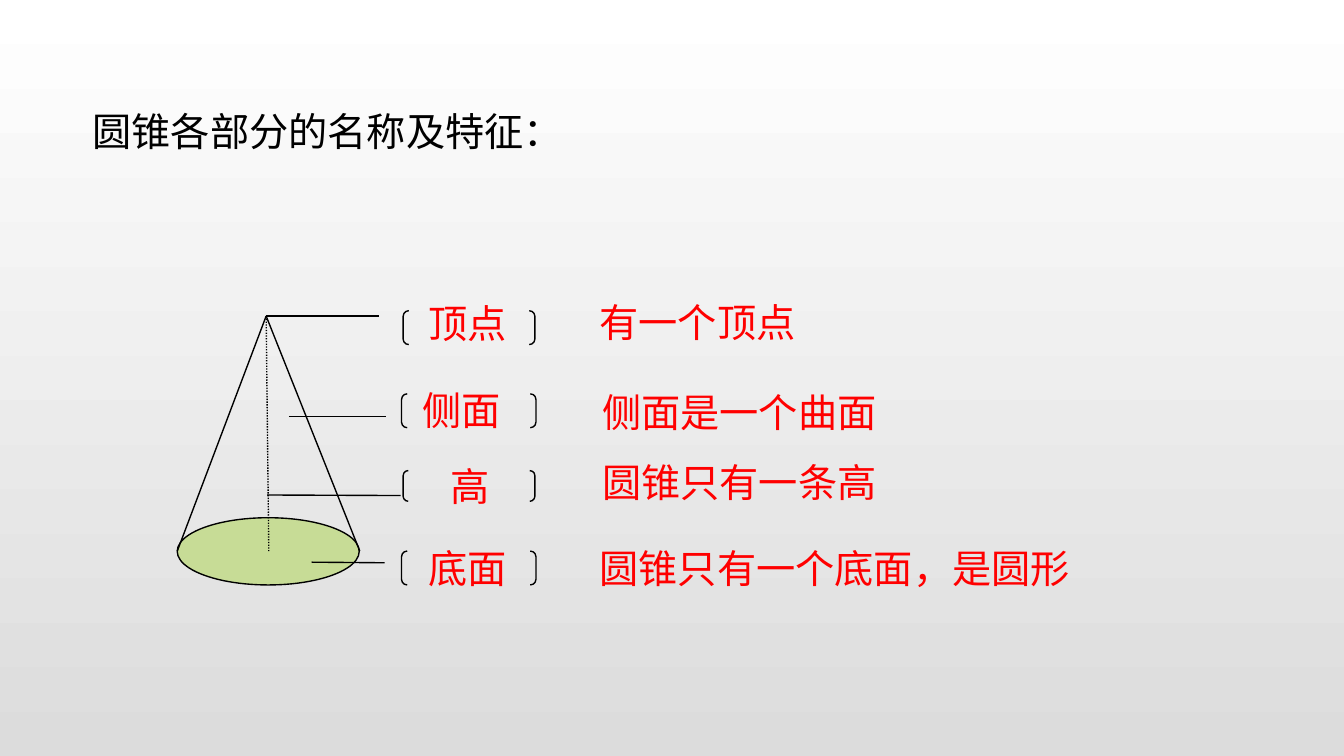
from lxml.etree import SubElement
from pptx import Presentation
from pptx.dml.color import RGBColor
from pptx.enum.dml import MSO_LINE
from pptx.enum.shapes import MSO_CONNECTOR, MSO_SHAPE
from pptx.enum.text import MSO_ANCHOR, MSO_AUTO_SIZE
from pptx.oxml.ns import qn
from pptx.util import Cm, Pt

BLACK = RGBColor(0x00, 0x00, 0x00)
RED = RGBColor(0xFF, 0x00, 0x00)
GREEN = RGBColor(0xC7, 0xDC, 0x96)
WHITE = RGBColor(0xFF, 0xFF, 0xFF)
GREY = RGBColor(0xDC, 0xDC, 0xDC)


class ConeSlide:
    font = "Noto Sans CJK SC"
    text_size = Pt(21)
    line_width = Pt(0.75)
    text_height = Cm(1.09)

    def __init__(self, slide):
        self.slide = slide

    def background(self, top, bottom):
        fill = self.slide.background.fill
        fill.gradient()
        fill.gradient_angle = 270
        for stop, color in zip(fill.gradient_stops, (top, bottom)):
            stop.color.rgb = color

    def outline(self, preset, left, top, width, height, color=None):
        shape = self.slide.shapes.add_shape(
            preset, Cm(left), Cm(top), Cm(width), Cm(height))
        shape.shadow.inherit = False
        if color is None:
            shape.fill.background()
        else:
            shape.fill.solid()
            shape.fill.fore_color.rgb = color
        shape.line.color.rgb = BLACK
        shape.line.width = self.line_width

    def line(self, start, end, dash=None):
        connector = self.slide.shapes.add_connector(
            MSO_CONNECTOR.STRAIGHT, *map(Cm, start + end))
        connector.line.color.rgb = BLACK
        connector.line.width = self.line_width
        if dash is not None:
            connector.line.dash_style = dash
        SubElement(connector._element.spPr, qn("a:effectLst"))

    def text(self, words, left, top, width, color=RED, wrap=True):
        box = self.slide.shapes.add_textbox(
            Cm(left), Cm(top), Cm(width), self.text_height)
        frame = box.text_frame
        frame.word_wrap = wrap
        frame.auto_size = MSO_AUTO_SIZE.SHAPE_TO_FIT_TEXT
        frame.vertical_anchor = MSO_ANCHOR.MIDDLE
        frame.margin_left = frame.margin_right = Cm(0.18)
        frame.margin_top = frame.margin_bottom = Cm(0.1)
        run = frame.paragraphs[0].add_run()
        run.text = words
        run.font.size = self.text_size
        run.font.name = self.font
        run.font.color.rgb = color
        SubElement(run.font._element, qn("a:ea"), typeface=self.font)


def main():
    presentation = Presentation()
    presentation.slide_width = Cm(25.4)
    presentation.slide_height = Cm(14.28)
    cone = ConeSlide(presentation.slides.add_slide(presentation.slide_layouts[6]))
    cone.background(WHITE, GREY)

    cone.outline(MSO_SHAPE.OVAL, 3.35, 9.78, 3.44, 1.27, GREEN)
    apex = (5.03, 5.97)
    base_y = 10.41
    for base_x, dash in ((3.35, None), (6.8, None), (5.08, MSO_LINE.ROUND_DOT)):
        cone.line(apex, (base_x, base_y), dash)

    pointers = (
        (apex, (7.16, 5.97)),
        ((5.46, 7.87), (7.3, 7.87)),
        ((5.05, 9.35), (7.57, 9.36)),
        ((5.89, 10.62), (7.27, 10.63)),
    )
    for start, end in pointers:
        cone.line(start, end)

    brackets = (
        (7.62, 5.87, 2.49, 0.64),
        (7.59, 7.44, 2.54, 0.64),
        (7.62, 8.89, 2.49, 0.58),
        (7.59, 10.41, 2.54, 0.64),
    )
    for place in brackets:
        cone.outline(MSO_SHAPE.DOUBLE_BRACKET, *place)

    cone.text("圆锥各部分的名称及特征：", 1.57, 1.93, 20.52, BLACK)

    part_names = (
        ("顶点", 7.92, 5.56, 2.08, True),
        ("侧面", 7.8, 7.19, 1.88, False),
        ("高", 8.33, 8.64, 1.14, False),
        ("底面", 7.92, 10.19, 2.54, True),
    )
    for name, left, top, width, wrap in part_names:
        cone.text(name, left, top, width, wrap=wrap)

    features = (
        ("有一个顶点", 11.15, 5.54, 11.15),
        ("侧面是一个曲面", 11.2, 7.24, 8.33),
        ("圆锥只有一条高", 11.2, 8.56, 12.22),
        ("圆锥只有一个底面，是圆形", 11.15, 10.19, 11.71),
    )
    for feature in features:
        cone.text(*feature)

    presentation.save("out.pptx")


if __name__ == "__main__":
    main()
